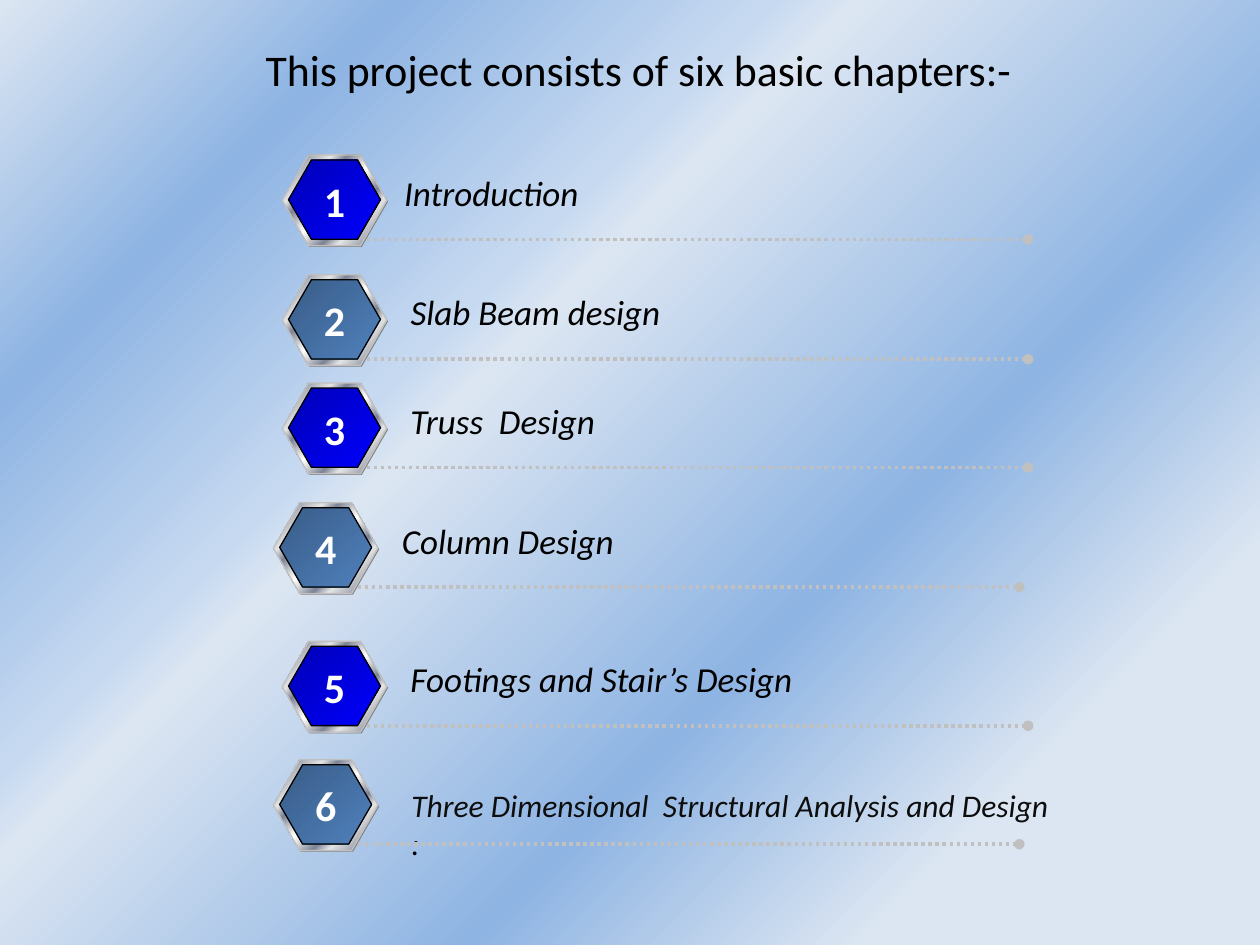
from lxml.etree import SubElement
from pptx import Presentation
from pptx.dml.color import RGBColor
from pptx.enum.dml import MSO_LINE as Dash
from pptx.enum.shapes import MSO_CONNECTOR as Conn, MSO_SHAPE as Shape
from pptx.enum.text import MSO_AUTO_SIZE as Auto, PP_ALIGN as Align
from pptx.oxml.ns import qn
from pptx.util import Inches, Pt

TITLE = "This project consists of six basic chapters:-"
# left and top of the badge, label, label offset and width
ROWS = [
    (2.24, 1.23, "Introduction", 0.87, 4.36),
    (2.24, 2.18, "Slab Beam design", 0.92, 2.19),
    (2.24, 3.04, "Truss  Design", 0.92, 1.74),
    (2.17, 3.99, "Column Design", 0.92, 1.98),
    (2.24, 5.09, "Footings and Stair’s Design", 0.92, 3.27),
    (2.17, 6.03, None, 0, 0),
]
LAST = [[(" ", "000000", False),
         ("Three Dimensional  Structural Analysis and Design", "0D0D0D", True)],
        [(" :", "000000", True)]]

SKY = [(18, "DCE6F2"), (36, "8EB4E3"), (61, "DCE6F2"),
       (65, "C6D9F1"), (82, "8EB4E3"), (100, "DCE6F2")]
METAL = [(0, "E6E6E6"), (7, "7D8496"), (26, "E6E6E6"), (34, "7D8496"),
         (46, "E6E6E6"), (50, "FFFFFF"), (54, "E6E6E6"), (66, "7D8496"),
         (74, "E6E6E6"), (93, "7D8496"), (100, "E6E6E6")]
FACES = [[(0, "0000B6"), (100, "0000FF")], [(0, "395C87"), (100, "4F81BD")]]


def rgb(code):
    return RGBColor.from_string(code)


def blend(fill, root, stops, corner=False):
    """Gradient at 45 degrees, or spreading from the bottom right corner."""
    fill.gradient()
    grad = next(root.iter(qn("a:gradFill")))
    for child in list(grad):
        grad.remove(child)
    items = SubElement(grad, qn("a:gsLst"))
    for pos, code in stops:
        stop = SubElement(items, qn("a:gs"), pos=str(pos * 1000))
        SubElement(stop, qn("a:srgbClr"), val=code)
    if corner:
        way = SubElement(grad, qn("a:path"), path="circle")
        SubElement(way, qn("a:fillToRect"), l="100000", t="100000")
        SubElement(grad, qn("a:tileRect"), r="-100000", b="-100000")
    else:
        SubElement(grad, qn("a:lin"), ang="2700000", scaled="1")


def hexagon(shapes, x, y, w, h, fill, line=None):
    hexa = shapes.add_shape(Shape.HEXAGON, *map(Inches, (x, y, w, h)))
    hexa.shadow.inherit = False
    hexa.adjustments[0] = 0.289
    if isinstance(fill, str):
        hexa.fill.solid()
        hexa.fill.fore_color.rgb = rgb(fill)
    else:
        blend(hexa.fill, hexa._element, fill)
    if line:
        hexa.line.color.rgb = rgb(line)
        hexa.line.width = Pt(0.75)
    else:
        hexa.line.fill.background()


def rule(shapes, x, y, length):
    """Dotted line that ends in a dot."""
    line = shapes.add_connector(Conn.STRAIGHT, *map(Inches, (x, y, x + length, y)))
    line.line.color.rgb = rgb("C0C0C0")
    line.line.width = Pt(2)
    line.line.dash_style = Dash.ROUND_DOT
    SubElement(line.line._get_or_add_ln(), qn("a:tailEnd"), type="oval")
    SubElement(line._element.spPr, qn("a:effectLst"))


def write(shapes, text, x, y, w, h, size, color="000000", bold=False,
          italic=False, align=Align.LEFT, wrap=False):
    """Text is a string, or paragraphs of (text, colour, italic) runs."""
    frame = shapes.add_textbox(*map(Inches, (x, y, w, h))).text_frame
    frame.word_wrap = wrap
    frame.auto_size = Auto.SHAPE_TO_FIT_TEXT
    paras = [[(text, color, italic)]] if isinstance(text, str) else text
    for i, runs in enumerate(paras):
        para = frame.add_paragraph() if i else frame.paragraphs[0]
        para.alignment = align
        for words, code, slant in runs:
            run = para.add_run()
            run.text = words
            font = run.font
            font.name, font.size = "Calibri", Pt(size)
            font.bold, font.italic = bold, slant
            font.color.rgb = rgb(code)


def main():
    deck = Presentation()
    deck.slide_width, deck.slide_height = Inches(10), Inches(7.5)
    slide = deck.slides.add_slide(deck.slide_layouts[6])
    blend(slide.background.fill, slide._element, SKY, corner=True)

    for i, (x, y, label, gap, width) in enumerate(ROWS):
        if not label:
            write(slide.shapes, LAST, 3.11, 6.19, 5.66, 0.71, 18)
        group = slide.shapes.add_group_shape().shapes
        hexagon(group, x + 0.01, y + 0.01, 0.83, 0.72, "808080")
        hexagon(group, x, y, 0.83, 0.72, METAL, "C0C0C0")
        hexagon(group, x + 0.05, y + 0.04, 0.73, 0.63, FACES[i % 2], "000000")
        rule(group, x + 0.67, y + 0.67, 5.25)
        if label:
            write(group, label, x + gap, y + 0.08, width, 0.44, 20,
                  italic=True, wrap=i == 0)
        write(group, str(i + 1), x + 0.23, y + 0.11, 0.37, 0.51, 24,
              color="FFFFFF", bold=True, align=Align.CENTER)

    write(slide.shapes, TITLE, 2.01, 0.29, 6.54, 0.52, 25, wrap=True)
    deck.save("out.pptx")


if __name__ == "__main__":
    main()
